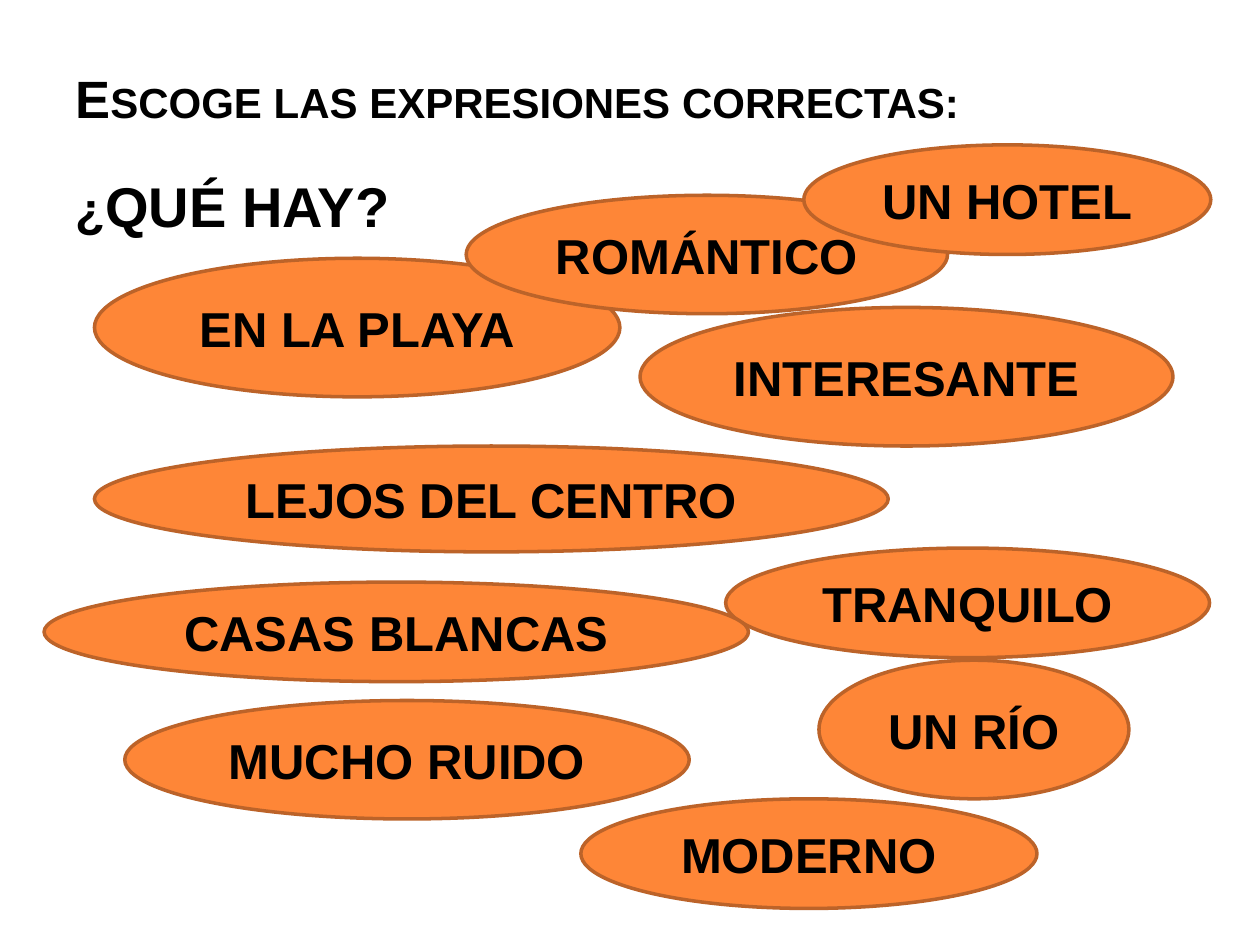
from pptx import Presentation
from pptx.dml.color import RGBColor
from pptx.enum.shapes import MSO_SHAPE as Shape
from pptx.enum.text import MSO_ANCHOR as Anchor, PP_ALIGN as Align
from pptx.util import Inches, Pt

BLACK = RGBColor(0x00, 0x00, 0x00)
ORANGE = RGBColor(0xFE, 0x86, 0x37)
BROWN = RGBColor(0xBC, 0x63, 0x29)

EXPRESSIONS = [
    ("EN LA PLAYA", 0.75, 2.05, 4.17, 1.1),
    ("ROMÁNTICO", 3.7, 1.55, 3.82, 0.94),
    ("UN HOTEL", 6.38, 1.15, 3.23, 0.87),
    ("INTERESANTE", 5.08, 2.44, 4.23, 1.1),
    ("LEJOS DEL CENTRO", 0.75, 3.54, 6.3, 0.84),
    ("TRANQUILO", 5.76, 4.35, 3.84, 0.87),
    ("CASAS BLANCAS", 0.35, 4.62, 5.59, 0.79),
    ("UN RÍO", 6.5, 5.24, 2.46, 1.1),
    ("MUCHO RUIDO", 0.99, 5.56, 4.48, 0.94),
    ("MODERNO", 4.61, 6.34, 3.62, 0.87),
]


def add_run(paragraph, wording, size):
    """Append a bold black Arial run and return it."""
    run = paragraph.add_run()
    run.text = wording
    style = {"name": "Arial", "size": Pt(size), "bold": True}
    for attribute, value in style.items():
        setattr(run.font, attribute, value)
    run.font.color.rgb = BLACK
    return run


def add_heading(slide, box, anchor, runs, space_before=0, small_caps=False):
    """Add a left-aligned heading made of (wording, size) runs."""
    frame = slide.shapes.add_textbox(*map(Inches, box)).text_frame
    frame.word_wrap = True
    frame.vertical_anchor = anchor
    heading = frame.paragraphs[0]
    heading.space_before = Pt(space_before)
    for wording, size in runs:
        run = add_run(heading, wording, size)
        if small_caps:
            run.font._element.set("cap", "small")


def add_expression(slide, wording, *box):
    """Add an orange oval with a centred expression."""
    oval = slide.shapes.add_shape(Shape.OVAL, *map(Inches, box))
    oval.shadow.inherit = False
    oval.fill.solid()
    oval.fill.fore_color.rgb = ORANGE
    oval.line.color.rgb = BROWN
    oval.line.width = Pt(2)
    frame = oval.text_frame
    frame.word_wrap = True
    frame.vertical_anchor = Anchor.MIDDLE
    frame.paragraphs[0].alignment = Align.CENTER
    add_run(frame.paragraphs[0], wording, 28)


def main():
    """Build the vocabulary slide and save it."""
    deck = Presentation()
    deck.slide_width, deck.slide_height = Inches(10), Inches(7.5)
    slide = deck.slides.add_slide(deck.slide_layouts[6])
    add_heading(slide, (0.5, 0.3, 8.17, 0.77), Anchor.BOTTOM,
                [("Escoge las expresiones correctas:", 30)], small_caps=True)
    add_heading(slide, (0.5, 1.31, 8.17, 5.77), Anchor.TOP,
                [("¿", 28), ("QUÉ HAY?", 32)], space_before=6)
    for expression in EXPRESSIONS:
        add_expression(slide, *expression)
    deck.save("out.pptx")


if __name__ == "__main__":
    main()
